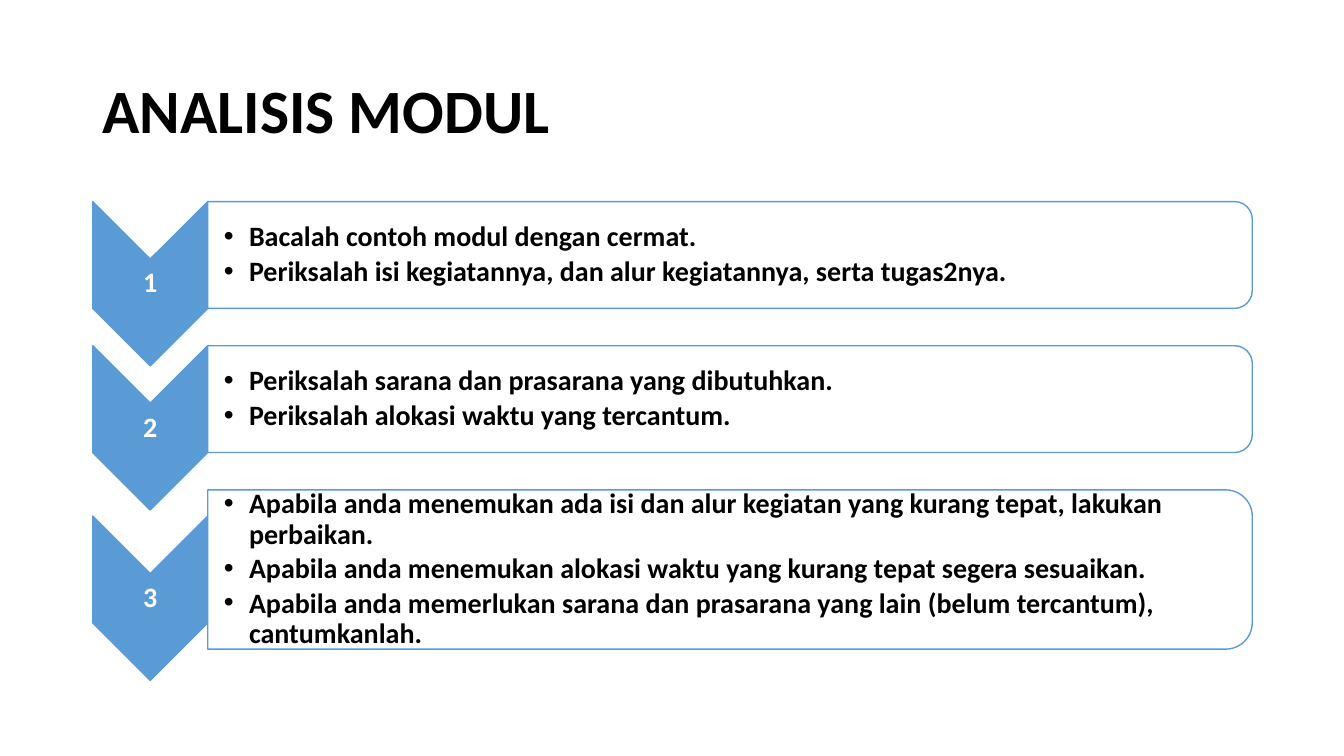
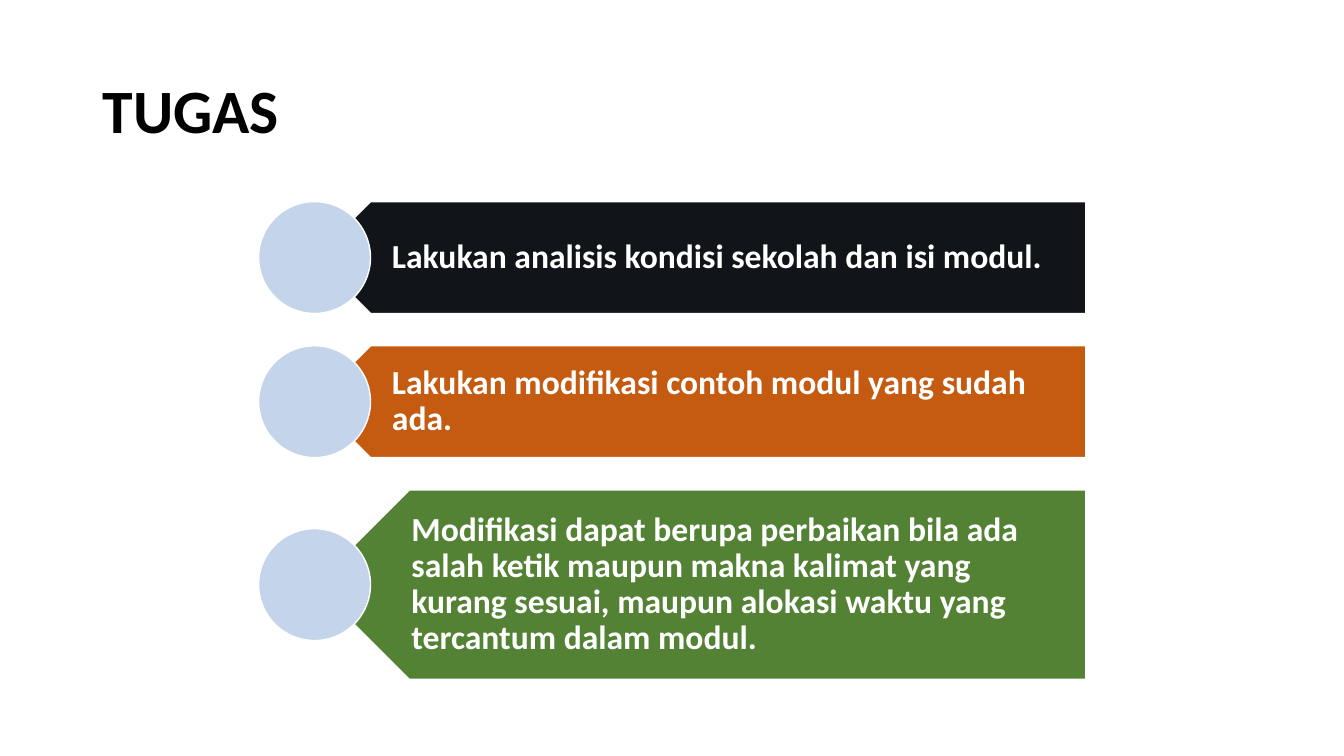
from lxml.etree import SubElement
from pptx import Presentation
from pptx.dml.color import RGBColor
from pptx.enum.shapes import MSO_SHAPE
from pptx.enum.text import MSO_ANCHOR, PP_ALIGN
from pptx.oxml.ns import qn
from pptx.util import Pt

EMU_PER_PX = 9144
FONT = "Calibri"
COLORS = {
    "black": "000000",
    "white": "FFFFFF",
    "blue": "5B9BD5",
    "pale_blue": "C4D5EB",
    "navy": "11151A",
    "orange": "C55A11",
    "green": "548235",
}
ROW_TOP = 200
ROW_PITCH = 143

STEPS = [
    (106, [
        "Bacalah contoh modul dengan cermat.",
        "Periksalah isi kegiatannya, dan alur kegiatannya, serta tugas2nya.",
    ]),
    (106, [
        "Periksalah sarana dan prasarana yang dibutuhkan.",
        "Periksalah alokasi waktu yang tercantum.",
    ]),
    (158, [
        "Apabila anda menemukan ada isi dan alur kegiatan yang kurang tepat, lakukan perbaikan.",
        "Apabila anda menemukan alokasi waktu yang kurang tepat segera sesuaikan.",
        "Apabila anda memerlukan sarana dan prasarana yang lain (belum tercantum), cantumkanlah.",
    ]),
]
TASKS = [
    (111, "navy", "Lakukan analisis kondisi sekolah dan isi modul."),
    (111, "orange", "Lakukan modifikasi contoh modul yang sudah ada."),
    (188, "green", "Modifikasi dapat berupa perbaikan bila ada salah ketik maupun makna "
     "kalimat yang kurang sesuai, maupun alokasi waktu yang tercantum dalam modul."),
]


def px(value):
    return round(value * EMU_PER_PX)


def color(name):
    return RGBColor.from_string(COLORS[name])


def add_box(slide, kind, left, top, width, height, fill, line, rotation=0):
    if rotation == 90:
        left, top = left + (width - height) / 2, top + (height - width) / 2
        width, height = height, width
    shape = slide.shapes.add_shape(kind, px(left), px(top), px(width), px(height))
    shape.rotation = rotation
    shape.shadow.inherit = False
    shape.fill.solid()
    shape.fill.fore_color.rgb = color(fill)
    shape.line.color.rgb = color(line)
    shape.line.width = Pt(1)


def add_bullet(paragraph):
    properties = paragraph._p.get_or_add_pPr()
    properties.set("marL", str(px(25)))
    properties.set("indent", str(px(-25)))
    SubElement(properties, qn("a:buFont")).set("typeface", "Arial")
    SubElement(properties, qn("a:buChar")).set("char", "•")


def add_text(slide, left, top, width, height, lines, size, text_color,
             insets=(1, 1, 1, 1), align=PP_ALIGN.LEFT, bullets=False):
    box = slide.shapes.add_textbox(px(left), px(top), px(width), px(height))
    frame = box.text_frame
    frame.word_wrap = True
    frame.vertical_anchor = MSO_ANCHOR.MIDDLE
    frame.margin_left, frame.margin_top, frame.margin_right, frame.margin_bottom = map(px, insets)
    frame.text = "\n".join(lines)
    for paragraph in frame.paragraphs:
        paragraph.alignment = align
        paragraph.line_spacing = 0.9
        if bullets:
            paragraph.space_after = Pt(3)
            add_bullet(paragraph)
        for run in paragraph.runs:
            run.font.name = FONT
            run.font.size = Pt(size)
            run.font.bold = True
            run.font.color.rgb = color(text_color)


def add_titled_slide(presentation, title):
    slide = presentation.slides.add_slide(presentation.slide_layouts[6])
    add_text(slide, 92, 40, 1150, 145, [title], 44, "black", (10, 5, 10, 5))
    return slide


def add_step(slide, index, height, lines):
    top = ROW_TOP + index * ROW_PITCH
    chevron_top = top + (height - 106) / 2
    add_box(slide, MSO_SHAPE.CHEVRON, 92, chevron_top, 114, 163, "blue", "blue", 90)
    add_text(slide, 92, chevron_top + 57, 114, 49, [str(index + 1)], 20, "white",
             align=PP_ALIGN.CENTER)
    add_box(slide, MSO_SHAPE.ROUND_2_SAME_RECTANGLE, 206, top, 1036, height, "white", "blue", 90)
    add_text(slide, 206, top, 1031, height, lines, 20, "black", (16, 1, 1, 1), bullets=True)


def add_task(slide, index, height, fill, text):
    top = ROW_TOP + index * ROW_PITCH
    left, width, diameter = 312, 765, 111
    text_offset = height / 4
    add_box(slide, MSO_SHAPE.PENTAGON, left, top, width, height, fill, "white", 180)
    add_text(slide, left + text_offset, top, width - text_offset, height, [text], 24, "white",
             (49, 10, 19, 10))
    add_box(slide, MSO_SHAPE.OVAL, left - diameter / 2, top + (height - diameter) / 2,
            diameter, diameter, "pale_blue", "white")


def main():
    presentation = Presentation()
    presentation.slide_width = px(1333)
    presentation.slide_height = px(750)
    analysis = add_titled_slide(presentation, "ANALISIS MODUL")
    for index, (height, lines) in enumerate(STEPS):
        add_step(analysis, index, height, lines)
    assignment = add_titled_slide(presentation, "TUGAS")
    for index, (height, fill, text) in enumerate(TASKS):
        add_task(assignment, index, height, fill, text)
    presentation.save("out.pptx")


if __name__ == "__main__":
    main()
